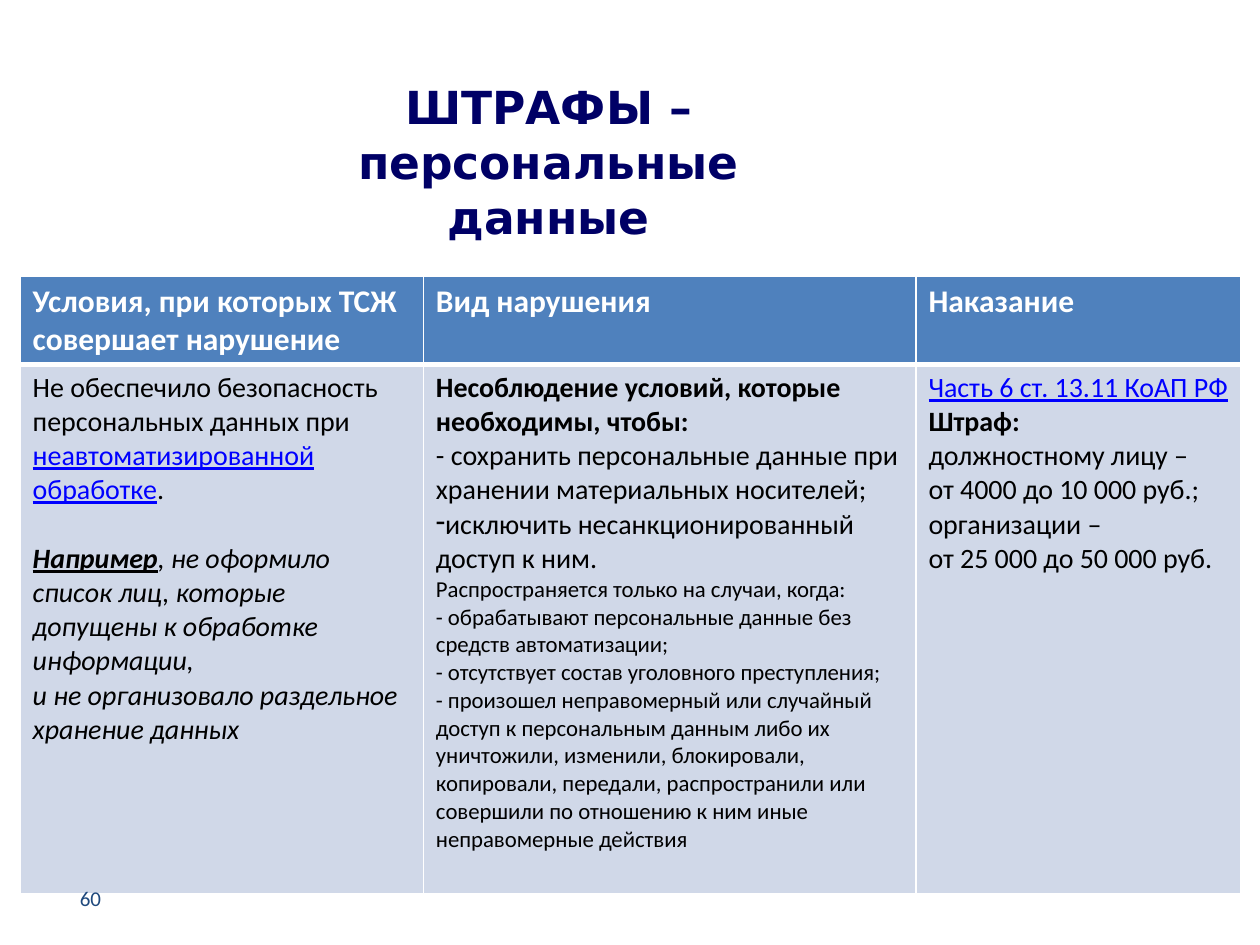
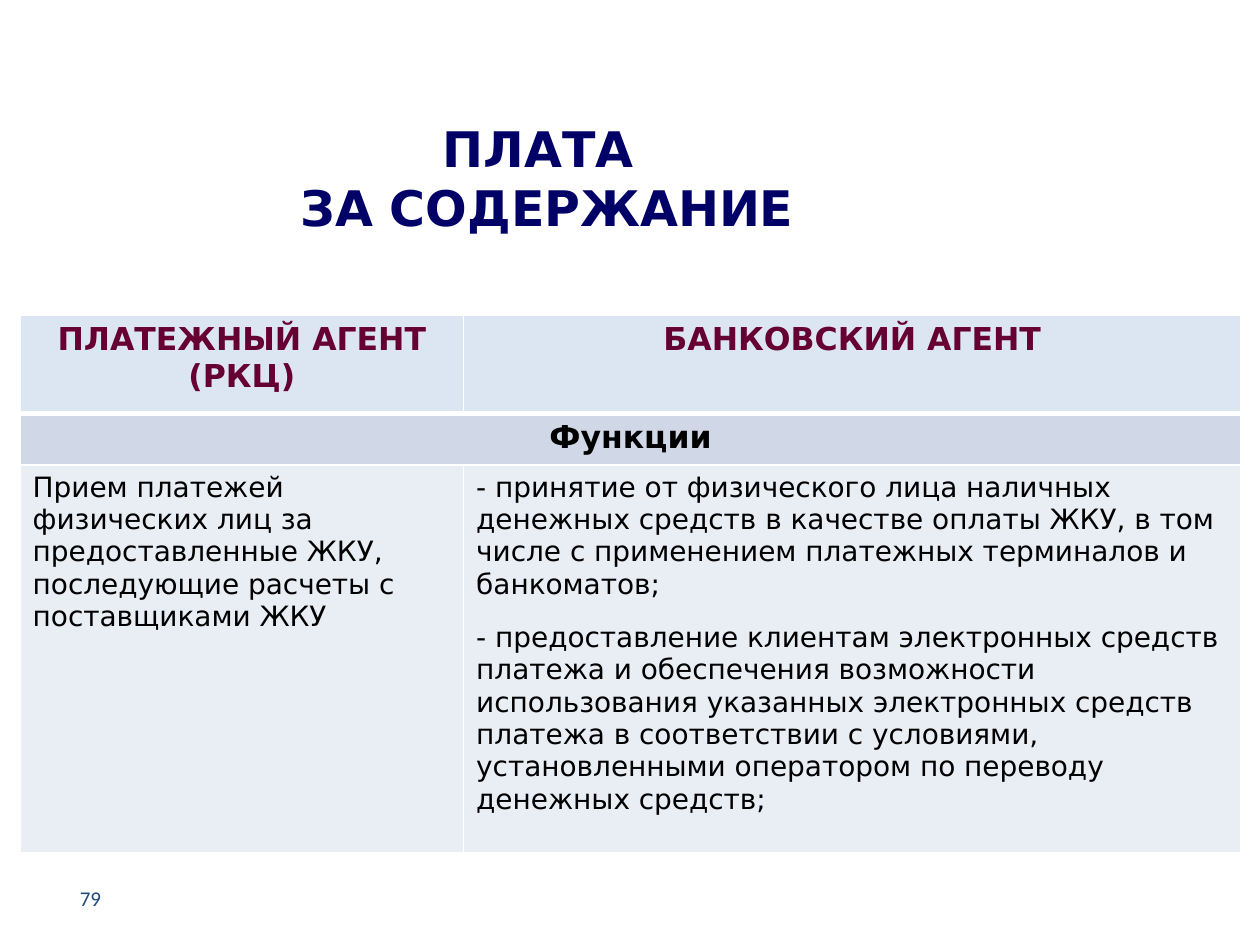
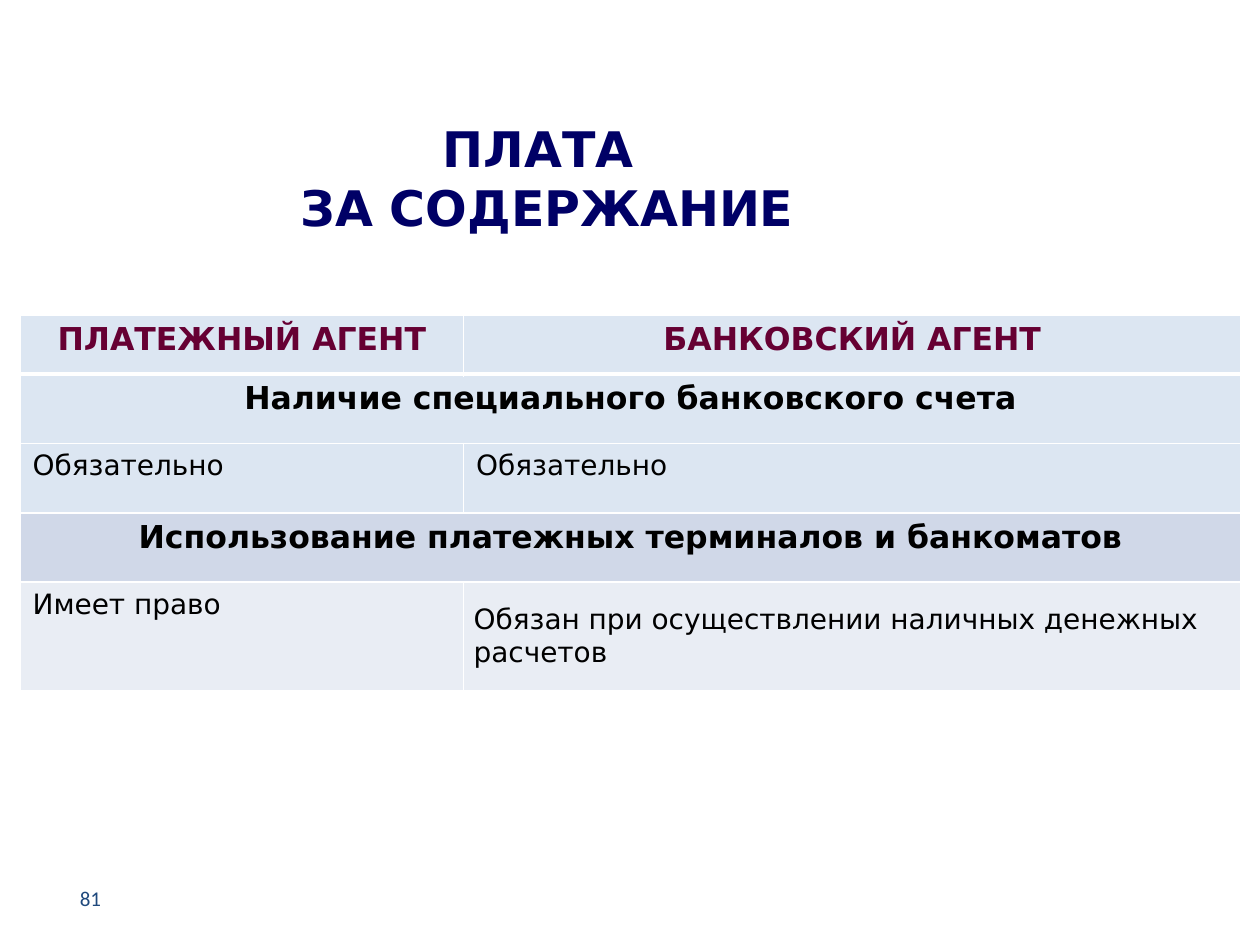
"""Builds three slides on housing association fines and payment agents."""
from lxml.etree import SubElement
from pptx import Presentation
from pptx.dml.color import RGBColor
from pptx.enum.text import MSO_ANCHOR as Anchor, PP_ALIGN as Align
from pptx.oxml.ns import qn
from pptx.util import Inches, Pt

NAVY, SLATE, WINE = "000066", "1F497D", "660033"
WHITE, BLACK, LINK_BLUE = "FFFFFF", "000000", "0000FF"
BLUE, ICE, BAND, PALE = "4F81BD", "DCE6F2", "D0D8E8", "E9EDF4"
SANS, CALIBRI = "DejaVu Sans", "Calibri"

TABLE_LEFT = 0.16
NUMBER_BOX = (0.35, 6.93, 0.55, 0.4)
NUMBER_STYLE = dict(name=CALIBRI, size=12, color=SLATE, align=Align.RIGHT)
TITLE_STYLE = dict(name=SANS, bold=True, color=NAVY, align=Align.CENTER)

FINE_HEAD = dict(name=CALIBRI, size=18, bold=True, color=WHITE)
FINE_TEXT = dict(name=CALIBRI, size=16, bold=False, color=BLACK)
FINE_STRONG = FINE_TEXT | dict(bold=True)
FINE_NOTE = FINE_TEXT | dict(size=13)
FINE_BULLET = FINE_TEXT | dict(bullet="-")
FINE_EXAMPLE = FINE_TEXT | dict(italic=True, before=19.5)
AGENT_HEAD = dict(name=SANS, size=18, bold=True, color=WINE, align=Align.CENTER)
AGENT_SECTION = AGENT_HEAD | dict(color=BLACK)
AGENT_TEXT = dict(name=SANS, size=16, bold=False, color=BLACK)
LINK = dict(color=LINK_BLUE, underline=True)

FINE_ROWS = [
    dict(height=0.7, fill=BLUE, cells=[
        [("Условия, при которых ТСЖ совершает нарушение", FINE_HEAD)],
        [("Вид нарушения", FINE_HEAD)],
        [("Наказание", FINE_HEAD)],
    ]),
    dict(height=4.2, fill=BAND, cells=[
        [
            ([("Не обеспечило безопасность персональных данных при ", {}),
              ("неавтоматизированной\nобработке", LINK), (".", {})], FINE_TEXT),
            ([("Например", dict(bold=True, underline=True)),
              (", не оформило список лиц, которые допущены к обработке информации,\n"
               "и не организовало раздельное\nхранение данных", {})], FINE_EXAMPLE),
        ],
        [
            ("Несоблюдение условий, которые необходимы, чтобы:", FINE_STRONG),
            ("- сохранить персональные данные при хранении материальных носителей;", FINE_TEXT),
            ("исключить несанкционированный доступ к ним.", FINE_BULLET),
            ("Распространяется только на случаи, когда:", FINE_NOTE),
            ("- обрабатывают персональные данные без средств автоматизации;", FINE_NOTE),
            ("- отсутствует состав уголовного преступления;", FINE_NOTE),
            ("- произошел неправомерный или случайный доступ к персональным данным либо их "
             "уничтожили, изменили, блокировали, копировали, передали, распространили или "
             "совершили по отношению к ним иные неправомерные действия", FINE_NOTE),
        ],
        [
            ([("Часть 6 ст. 13.11 КоАП РФ", LINK)], FINE_TEXT),
            ("Штраф:", FINE_STRONG),
            ("должностному лицу –\nот 4000 до 10 000 руб.;", FINE_TEXT),
            ("организации –", FINE_TEXT),
            ("от 25 000 до 50 000 руб.", FINE_TEXT),
        ],
    ]),
]

FUNCTION_ROWS = [
    dict(height=0.78, fill=ICE, cells=[
        [("ПЛАТЕЖНЫЙ АГЕНТ", AGENT_HEAD), ("(РКЦ)", AGENT_HEAD)],
        [("БАНКОВСКИЙ АГЕНТ", AGENT_HEAD)],
    ]),
    dict(height=0.41, fill=BAND, cells=[[("Функции", AGENT_SECTION)]]),
    dict(height=3.08, fill=PALE, cells=[
        [("Прием платежей физических лиц за предоставленные ЖКУ, последующие расчеты с "
          "поставщиками ЖКУ", AGENT_TEXT)],
        [
            ("- принятие от физического лица наличных денежных средств в качестве оплаты ЖКУ, "
             "в том числе с применением платежных терминалов и банкоматов;",
             AGENT_TEXT | dict(after=12)),
            ("- предоставление клиентам электронных средств платежа и обеспечения возможности "
             "использования указанных электронных средств платежа в соответствии с условиями, "
             "установленными оператором по переводу денежных средств;", AGENT_TEXT),
        ],
    ]),
]

ACCOUNT_ROWS = [
    dict(height=0.47, fill=ICE, cells=[
        [("ПЛАТЕЖНЫЙ АГЕНТ", AGENT_HEAD)],
        [("БАНКОВСКИЙ АГЕНТ", AGENT_HEAD)],
    ]),
    dict(height=0.55, fill=ICE, cells=[
        [("Наличие специального банковского счета", AGENT_SECTION)]]),
    dict(height=0.55, fill=ICE, cells=[[("Обязательно", AGENT_TEXT)]] * 2),
    dict(height=0.55, fill=BAND, cells=[
        [("Использование платежных терминалов и банкоматов", AGENT_SECTION)]]),
    dict(height=0.86, fill=PALE, centred_column=1, cells=[
        [("Имеет право", AGENT_TEXT)],
        [("Обязан при осуществлении наличных денежных расчетов", AGENT_TEXT)],
    ]),
]

FINE_TITLE = dict(text="ШТРАФЫ –\nперсональные\nданные", size=26, box=(2.34, 0.47, 4.03, 1.62))
PAYMENT_TITLE = dict(text="ПЛАТА \nЗА СОДЕРЖАНИЕ", size=28, box=(2.27, 0.78, 4.14, 1.25))
AGENT_COLUMNS = (3.52, 6.17)

SLIDES = [
    dict(number="60", title=FINE_TITLE, top=2.19, columns=(3.2, 3.91, 2.58), rows=FINE_ROWS),
    dict(number="79", title=PAYMENT_TITLE, top=2.5, columns=AGENT_COLUMNS, rows=FUNCTION_ROWS),
    dict(number="81", title=PAYMENT_TITLE, top=2.5, columns=AGENT_COLUMNS, rows=ACCOUNT_ROWS),
]


def rgb(color):
    return RGBColor.from_string(color)


def set_font(font, style):
    for key in ("name", "bold", "italic", "underline"):
        if key in style:
            setattr(font, key, style[key])
    if "size" in style:
        font.size = Pt(style["size"])
    if "color" in style:
        font.color.rgb = rgb(style["color"])


def write_runs(paragraph, runs):
    for text, style in runs:
        for index, line in enumerate(text.split("\n")):
            if index:
                paragraph.add_line_break()
            run = paragraph.add_run()
            run.text = line
            if style:
                set_font(run.font, style)


def write_paragraphs(frame, paragraphs):
    for index, (content, style) in enumerate(paragraphs):
        paragraph = frame.add_paragraph() if index else frame.paragraphs[0]
        paragraph.alignment = style.get("align", Align.LEFT)
        paragraph.space_before = Pt(style.get("before", 0))
        paragraph.space_after = Pt(style.get("after", 0))
        if "bullet" in style:
            properties = paragraph._p.get_or_add_pPr()
            properties.set("marL", "0")
            properties.set("indent", "0")
            SubElement(properties, qn("a:buChar")).set("char", style["bullet"])
        set_font(paragraph.font, style)
        write_runs(paragraph, [(content, {})] if isinstance(content, str) else content)


def add_text(slide, box, text, style):
    frame = slide.shapes.add_textbox(*map(Inches, box)).text_frame
    frame.word_wrap = True
    frame.vertical_anchor = Anchor.MIDDLE
    write_paragraphs(frame, [(text, style)])


def style_cell(cell, fill, bottom_width):
    properties = cell._tc.get_or_add_tcPr()
    for side, width in (("L", 1), ("R", 1), ("T", 1), ("B", bottom_width)):
        line = SubElement(properties, qn(f"a:ln{side}"), w=str(Pt(width)))
        solid = SubElement(line, qn("a:solidFill"))
        SubElement(solid, qn("a:srgbClr"), val=WHITE)
    cell.fill.solid()
    cell.fill.fore_color.rgb = rgb(fill)


def add_grid(slide, top, columns, rows):
    height = sum(row["height"] for row in rows)
    box = map(Inches, (TABLE_LEFT, top, sum(columns), height))
    table = slide.shapes.add_table(len(rows), len(columns), *box).table
    table.first_row = table.horz_banding = False
    for column, width in zip(table.columns, columns):
        column.width = Inches(width)
    for row_index, row in enumerate(rows):
        table.rows[row_index].height = Inches(row["height"])
        for column_index in range(len(columns)):
            style_cell(table.cell(row_index, column_index), row["fill"], 1 if row_index else 3)
        if len(row["cells"]) == 1:
            table.cell(row_index, 0).merge(table.cell(row_index, len(columns) - 1))
        for column_index, paragraphs in enumerate(row["cells"]):
            cell = table.cell(row_index, column_index)
            write_paragraphs(cell.text_frame, paragraphs)
            if row.get("centred_column") == column_index:
                cell.vertical_anchor = Anchor.MIDDLE
                cell.margin_left = cell.margin_right = Inches(0.08)
                cell.margin_top = cell.margin_bottom = Inches(0.04)


def main():
    presentation = Presentation()
    presentation.slide_width, presentation.slide_height = Inches(10), Inches(7.5)
    for content in SLIDES:
        slide = presentation.slides.add_slide(presentation.slide_layouts[6])
        title = content["title"]
        add_text(slide, title["box"], title["text"], TITLE_STYLE | dict(size=title["size"]))
        add_grid(slide, content["top"], content["columns"], content["rows"])
        add_text(slide, NUMBER_BOX, content["number"], NUMBER_STYLE)
    presentation.save("out.pptx")


if __name__ == "__main__":
    main()
